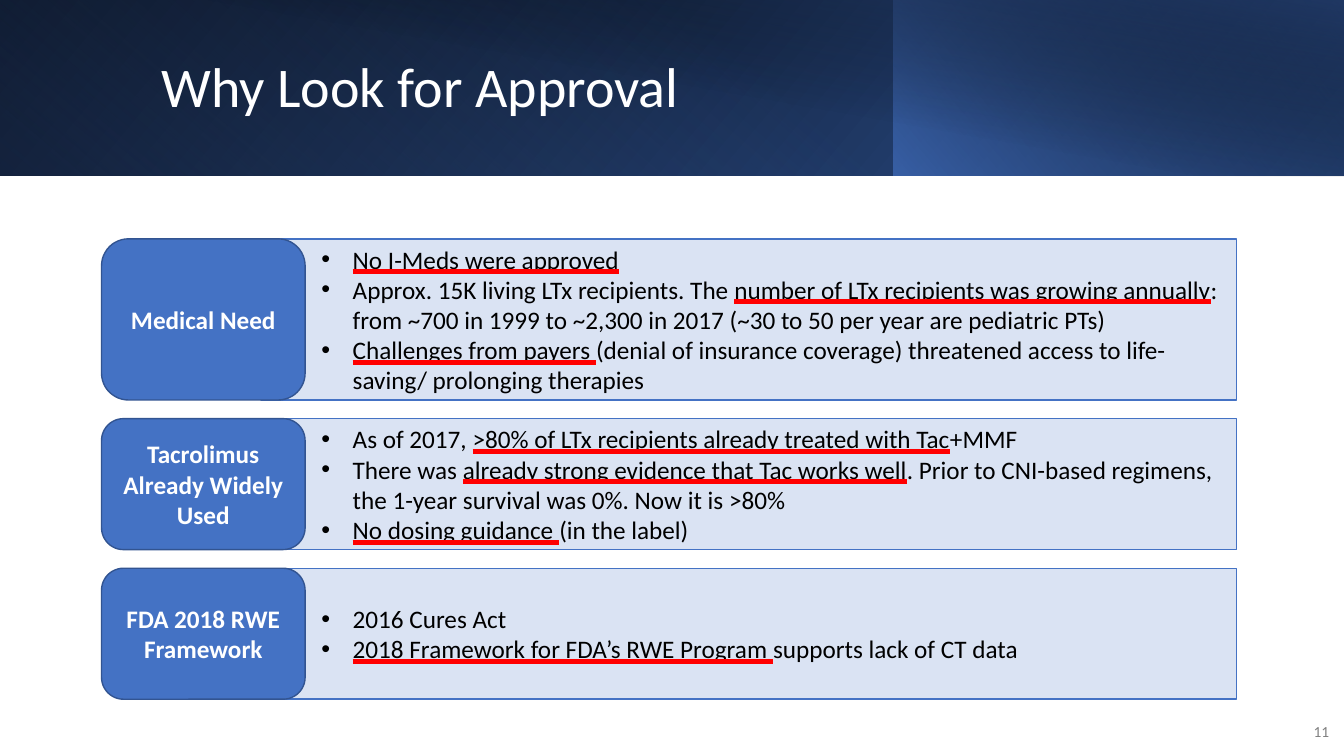
"""Build the slide on why approval was sought."""
import pptx
import pptx.util
import pptx.dml.color
import pptx.enum.shapes
import pptx.enum.text
import pptx.oxml

Cm, Pt = pptx.util.Cm, pptx.util.Pt
SHAPE = pptx.enum.shapes.MSO_SHAPE
ALIGN = pptx.enum.text.PP_ALIGN
MIDDLE = pptx.enum.text.MSO_ANCHOR.MIDDLE
HEAVY = pptx.enum.text.MSO_UNDERLINE.HEAVY_LINE
SPACE = 'xmlns:a="http://schemas.openxmlformats.org/drawingml/2006/main"'

TITLE = "Why Look for Approval"
PAGE = "11"
# Asterisks enclose the underlined words.
ROWS = [
    ("Medical Need", 4.06, [
        "*No I-Meds were approved*",
        "Approx. 15K living LTx recipients. The *number of LTx recipients was growing annually*"
        ": from ~700 in 1999 to ~2,300 in 2017 (~30 to 50 per year are pediatric PTs)",
        "*Challenges from payers *(denial of insurance coverage) threatened access to "
        "life-saving/ prolonging therapies",
    ]),
    ("Tacrolimus Already Widely Used", 3.3, [
        "As of 2017, *>80% of LTx recipients already treated with Tac*+MMF",
        "There was *already strong evidence that Tac works well*. Prior to CNI-based regimens, "
        "the 1-year survival was 0%. Now it is >80%",
        "*No dosing guidance *(in the label)",
    ]),
    ("FDA 2018 RWE Framework", 3.3, [
        "2016 Cures Act",
        "*2018 Framework for FDA’s RWE Program *supports lack of CT data",
    ]),
]
# Left, width, height, turn, mirrored, angle, stops (place, colour, opacity).
BANDS = [
    (0, 33.87, 4.42, 0, True, 140, [(0, "000000", 100), (100, "2F5597", 100)]),
    (0, 22.55, 4.42, 180, True, 230, [(20, "4472C4", 0), (100, "203864", 55)]),
    (22.53, 11.34, 4.42, 0, True, 220, [(0, "4472C4", 66), (100, "000000", 30)]),
    (1.27, 32.6, 4.44, 0, False, 280, [(50, "000000", 0), (99, "203864", 52)]),
]
TOP, GAP = 6.02, 0.47
LABEL, PANEL = (2.56, 5.13), (6.58, 24.59)


def paint(color, value):
    color.rgb = pptx.dml.color.RGBColor.from_string(value)


def style(para, size, value, align=ALIGN.LEFT, bold=False):
    para.alignment = align
    font = para.font
    font.name, font.size, font.bold = "Calibri", Pt(size), bold
    paint(font.color, value)


def add_box(slide, kind, left, top, width, height):
    box = slide.shapes.add_shape(kind, Cm(left), Cm(top), Cm(width), Cm(height))
    box.shadow.inherit = False
    return box


def add_band(slide, left, width, height, turn, mirror, angle, stops):
    band = add_box(slide, SHAPE.RECTANGLE, left, 0, width, height)
    band.line.fill.background()
    band.rotation = turn
    props = band._element.spPr
    if mirror:
        props.xfrm.set("flipH", "1")
    marks = "".join(
        f'<a:gs pos="{place * 1000}"><a:srgbClr val="{value}">'
        f'<a:alpha val="{alpha * 1000}"/></a:srgbClr></a:gs>'
        for place, value, alpha in stops)
    props.insert(2, pptx.oxml.parse_xml(
        f'<a:gradFill {SPACE} rotWithShape="1"><a:gsLst>{marks}</a:gsLst>'
        f'<a:lin ang="{angle * 60000}" scaled="0"/></a:gradFill>'))


def add_card(slide, kind, span, top, height, fill, edge):
    left, width = span
    card = add_box(slide, kind, left, top, width, height)
    card.fill.solid()
    paint(card.fill.fore_color, fill)
    paint(card.line.color, edge)
    card.line.width = Pt(1)
    frame = card.text_frame
    frame.word_wrap, frame.vertical_anchor = True, MIDDLE
    frame.margin_top = frame.margin_bottom = 0
    return frame


def add_point(para, text):
    style(para, 18, "000000")
    props = para._p.get_or_add_pPr()
    props.set("marL", str(Cm(2.06)))
    props.set("indent", str(Cm(-0.79)))
    for tag in ('<a:buChar {} char="•"/>', '<a:buFont {} typeface="Arial"/>'):
        props.insert(0, pptx.oxml.parse_xml(tag.format(SPACE)))
    for index, part in enumerate(text.split("*")):
        if not part:
            continue
        run = para.add_run()
        run.text = part
        if index % 2:
            run.font.underline = HEAVY
            run.font._element.append(pptx.oxml.parse_xml(
                f'<a:uFill {SPACE}><a:solidFill><a:srgbClr val="FF0000"/>'
                '</a:solidFill></a:uFill>'))


def add_row(slide, top, name, height, points):
    frame = add_card(slide, SHAPE.RECTANGLE, PANEL, top, height, "DAE3F3", "4472C4")
    for index, text in enumerate(points):
        add_point(frame.add_paragraph() if index else frame.paragraphs[0], text)
    frame = add_card(slide, SHAPE.ROUNDED_RECTANGLE, LABEL, top, height, "4472C4", "325491")
    frame.text = name
    style(frame.paragraphs[0], 18, "FFFFFF", ALIGN.CENTER, True)


def add_title(slide):
    title = slide.shapes.title
    title.left, title.top, title.width, title.height = Cm(3.81), Cm(0.81), Cm(27.48), Cm(2.87)
    frame = title.text_frame
    frame.text, frame.vertical_anchor = TITLE, MIDDLE
    frame.auto_size = pptx.enum.text.MSO_AUTO_SIZE.NONE
    frame.paragraphs[0].line_spacing = 0.9
    style(frame.paragraphs[0], 40, "FFFFFF")
    slide.shapes._spTree.append(title._element)


def add_page(slide):
    box = slide.shapes.add_textbox(Cm(32.51), Cm(17.93), Cm(1.24), Cm(1.02))
    frame = box.text_frame
    frame.text, frame.word_wrap, frame.vertical_anchor = PAGE, True, MIDDLE
    frame.paragraphs[0].space_after = Pt(6)
    style(frame.paragraphs[0], 11, "808080", ALIGN.RIGHT)


def main():
    deck = pptx.Presentation()
    deck.slide_width, deck.slide_height = Cm(33.87), Cm(19.05)
    slide = deck.slides.add_slide(deck.slide_layouts[5])
    for band in BANDS:
        add_band(slide, *band)
    add_title(slide)
    add_page(slide)
    top = TOP
    for name, height, points in ROWS:
        add_row(slide, top, name, height, points)
        top += height + GAP
    deck.save("out.pptx")


if __name__ == "__main__":
    main()
